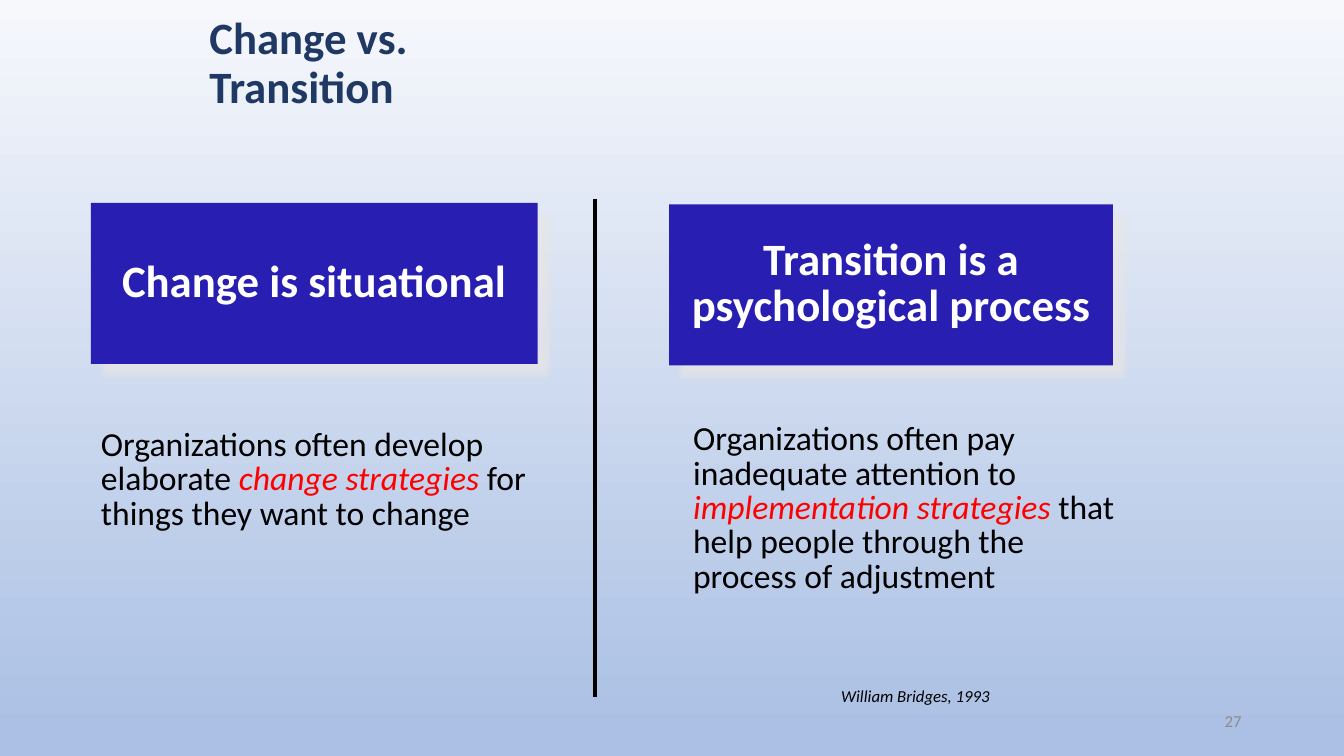
from lxml import etree
from pptx import Presentation
from pptx import util as u
from pptx.dml.color import RGBColor
from pptx.enum import shapes, text
from pptx.oxml import parse_xml
from pptx.oxml.ns import nsdecls, qn

Pt = u.Pt
FONT = "Calibri"
SKY_TOP = RGBColor(0xF6, 0xF8, 0xFC)
SKY_BOTTOM = RGBColor(0xAB, 0xC0, 0xE4)
NAVY = RGBColor(0x20, 0x38, 0x64)
PANEL_BLUE = RGBColor(0x29, 0x1E, 0xB2)
SHADOW_GREY = RGBColor(0xE7, 0xE6, 0xE6)
NUMBER_GREY = RGBColor(0x8C, 0x8C, 0x8C)
WHITE = RGBColor(0xFF, 0xFF, 0xFF)
BLACK = RGBColor(0, 0, 0)
RED = RGBColor(0xFF, 0, 0)

# Heading and body positions: left, top, width, height
COLUMNS = [
    ((65, 145, 319, 115), "Change is situational",
     (65, 303, 324, 117),
     ("Organizations often develop elaborate ", "change strategies",
      " for things they want to change")),
    ((478, 146, 317, 115), "Transition is a psychological process",
     (488, 299, 324, 141),
     ("Organizations often pay inadequate attention to ",
      "implementation strategies",
      " that help people through the process of adjustment")),
]


def paint_background(page):
    fill = page.background.fill
    fill.gradient()
    fill.gradient_angle = 270
    for stop, color, position in zip(fill.gradient_stops,
                                     (SKY_TOP, SKY_BOTTOM), (0, 0.97)):
        stop.color.rgb = color
        stop.position = position


def write(shape, parts, size, color, align=text.PP_ALIGN.LEFT,
          anchor=text.MSO_ANCHOR.TOP, spacing=1.0, bold=False, italic=False):
    """Fill a shape with one paragraph; every second part is red italic."""
    frame = shape.text_frame
    frame.word_wrap = True
    frame.vertical_anchor = anchor
    para = frame.paragraphs[0]
    para.alignment = align
    para.line_spacing = spacing
    font = para.font
    font.name, font.size, font.bold, font.italic = FONT, Pt(size), bold, italic
    font.color.rgb = color
    for index, part in enumerate(parts):
        span = para.add_run()
        span.text = part
        if index % 2:
            span.font.italic = True
            span.font.color.rgb = RED


def add_text(page, box, parts, size, color, **style):
    shape = page.shapes.add_textbox(*map(Pt, box))
    write(shape, parts, size, color, **style)


def cast_shadow(shape):
    """Give the shape a soft grey shadow to its lower right."""
    shape.shadow.inherit = False
    effects = shape._element.spPr.find(qn("a:effectLst"))
    effects.append(parse_xml(
        f'<a:outerShdw {nsdecls("a")} blurRad="{Pt(5)}" dist="{Pt(11.3)}" '
        f'dir="2700000" algn="ctr" rotWithShape="0">'
        f'<a:srgbClr val="{SHADOW_GREY}"><a:alpha val="75000"/></a:srgbClr>'
        f'</a:outerShdw>'))


def add_heading(page, box, words):
    panel = page.shapes.add_shape(shapes.MSO_SHAPE.RECTANGLE, *map(Pt, box))
    panel.fill.solid()
    panel.fill.fore_color.rgb = PANEL_BLUE
    panel.line.fill.background()
    cast_shadow(panel)
    write(panel, [words], 32, WHITE, align=text.PP_ALIGN.CENTER,
          anchor=text.MSO_ANCHOR.MIDDLE, spacing=0.85, bold=True)


def add_divider(page, x, top, bottom):
    line = page.shapes.add_connector(shapes.MSO_CONNECTOR.STRAIGHT,
                                     Pt(x), Pt(top), Pt(x), Pt(bottom))
    line.line.color.rgb = BLACK
    line.line.width = Pt(3)
    etree.SubElement(line._element.spPr, qn("a:effectLst"))


def build_comparison(page):
    paint_background(page)
    add_divider(page, 424.8, 142, 498)
    add_text(page, (142.5, 21.5, 282, 49), ["Change vs. Transition"], 32, NAVY,
             anchor=text.MSO_ANCHOR.MIDDLE, spacing=0.9, bold=True)
    for heading_box, heading, body_box, body in COLUMNS:
        add_heading(page, heading_box, heading)
        add_text(page, body_box, body, 24, BLACK, spacing=0.85)
    add_text(page, (540, 486, 228, 22), ["William Bridges, 1993"], 12, BLACK,
             align=text.PP_ALIGN.CENTER, italic=True)
    add_text(page, (678, 500.5, 216, 29), ["27"], 12, NUMBER_GREY,
             align=text.PP_ALIGN.RIGHT, anchor=text.MSO_ANCHOR.MIDDLE)


def main():
    deck = Presentation()
    deck.slide_width, deck.slide_height = Pt(960), Pt(540)
    build_comparison(deck.slides.add_slide(deck.slide_layouts[6]))
    deck.save("out.pptx")


if __name__ == "__main__":
    main()
